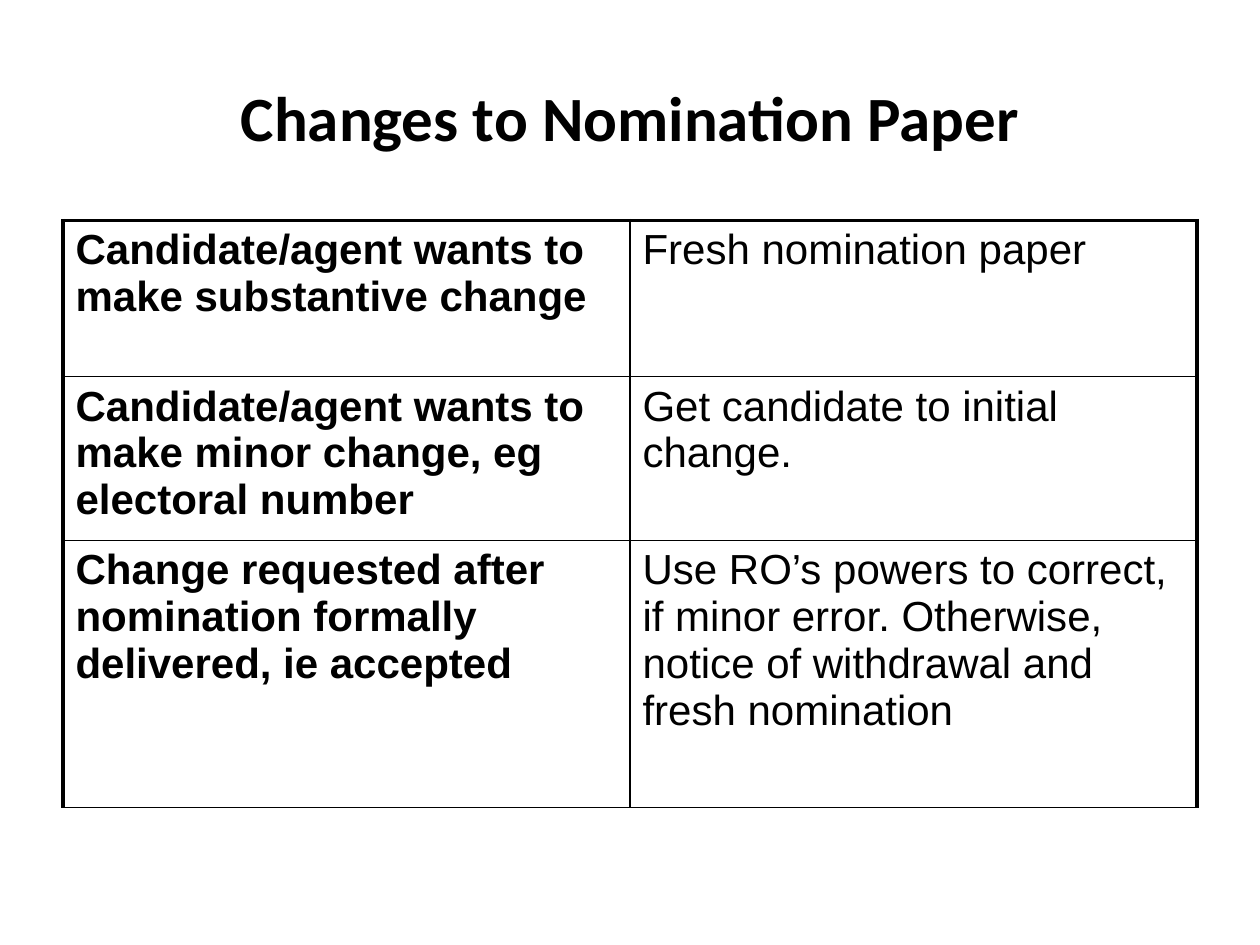
import pptx
import pptx.dml.color
import pptx.enum.text
import pptx.oxml.ns
import pptx.util
from lxml import etree

Pt = pptx.util.Pt
BLACK = "000000"
WHITE = "FFFFFF"
ROWS = [
    (89.28, "Candidate/agent wants to make substantive change",
     "Fresh nomination paper"),
    (93.6, "Candidate/agent wants to make minor change, eg electoral number",
     "Get candidate to initial change."),
    (152.64, "Change requested after nomination formally delivered, ie accepted",
     "Use RO’s powers to correct, if minor error. Otherwise, notice of "
     "withdrawal and fresh nomination"),
]


def color(code):
    """Return the colour for a hex string."""
    return pptx.dml.color.RGBColor.from_string(code)


def write(frame, text, size=24, face="Arial", bold=False, align="LEFT"):
    """Fill a text frame with one formatted paragraph."""
    para = frame.paragraphs[0]
    para.text = text
    para.alignment = getattr(pptx.enum.text.PP_ALIGN, align)
    para.space_before = Pt(0)
    font = para.runs[0].font
    font.size, font.name, font.bold = Pt(size), face, bold
    font.color.rgb = color(code=BLACK)


def border(cell, side, width):
    """Draw one solid edge of a cell."""
    name = pptx.oxml.ns.qn
    props = cell._tc.get_or_add_tcPr()
    line = etree.SubElement(props, name("a:ln" + side), w=str(Pt(width)))
    fill = etree.SubElement(line, name("a:solidFill"))
    etree.SubElement(fill, name("a:srgbClr"), val=BLACK)


def title(slide, text):
    """Place and fill the title."""
    shape = slide.shapes.title
    shape.left, shape.top = Pt(36), Pt(21.6)
    shape.width, shape.height = Pt(648), Pt(90)
    shape.text_frame.vertical_anchor = pptx.enum.text.MSO_ANCHOR.MIDDLE
    write(shape.text_frame, text, size=36, face="Calibri", bold=True,
          align="CENTER")


def grid(slide, rows):
    """Add the table, with heavy top, left and right edges."""
    high = sum(row[0] for row in rows)
    table = slide.shapes.add_table(
        len(rows), 2, Pt(36), Pt(126), Pt(648), Pt(high)).table
    table.first_row = table.horz_banding = False
    for r, (tall, *texts) in enumerate(rows):
        table.rows[r].height = Pt(tall)
        for c, text in enumerate(texts):
            cell = table.cell(r, c)
            write(cell.text_frame, text, bold=c == 0)
            heavy = {"L": c == 0, "R": c == 1, "T": r == 0, "B": False}
            for side, thick in heavy.items():
                border(cell, side, 2.25 if thick else 1)
            cell.fill.solid()
            cell.fill.fore_color.rgb = color(WHITE)


def main():
    """Build and save the slide."""
    deck = pptx.Presentation()
    deck.slide_width, deck.slide_height = Pt(720), Pt(540)
    slide = deck.slides.add_slide(deck.slide_layouts.get_by_name("Title Only"))
    title(slide, "Changes to Nomination Paper")
    grid(slide, ROWS)
    deck.save("out.pptx")


if __name__ == "__main__":
    main()
